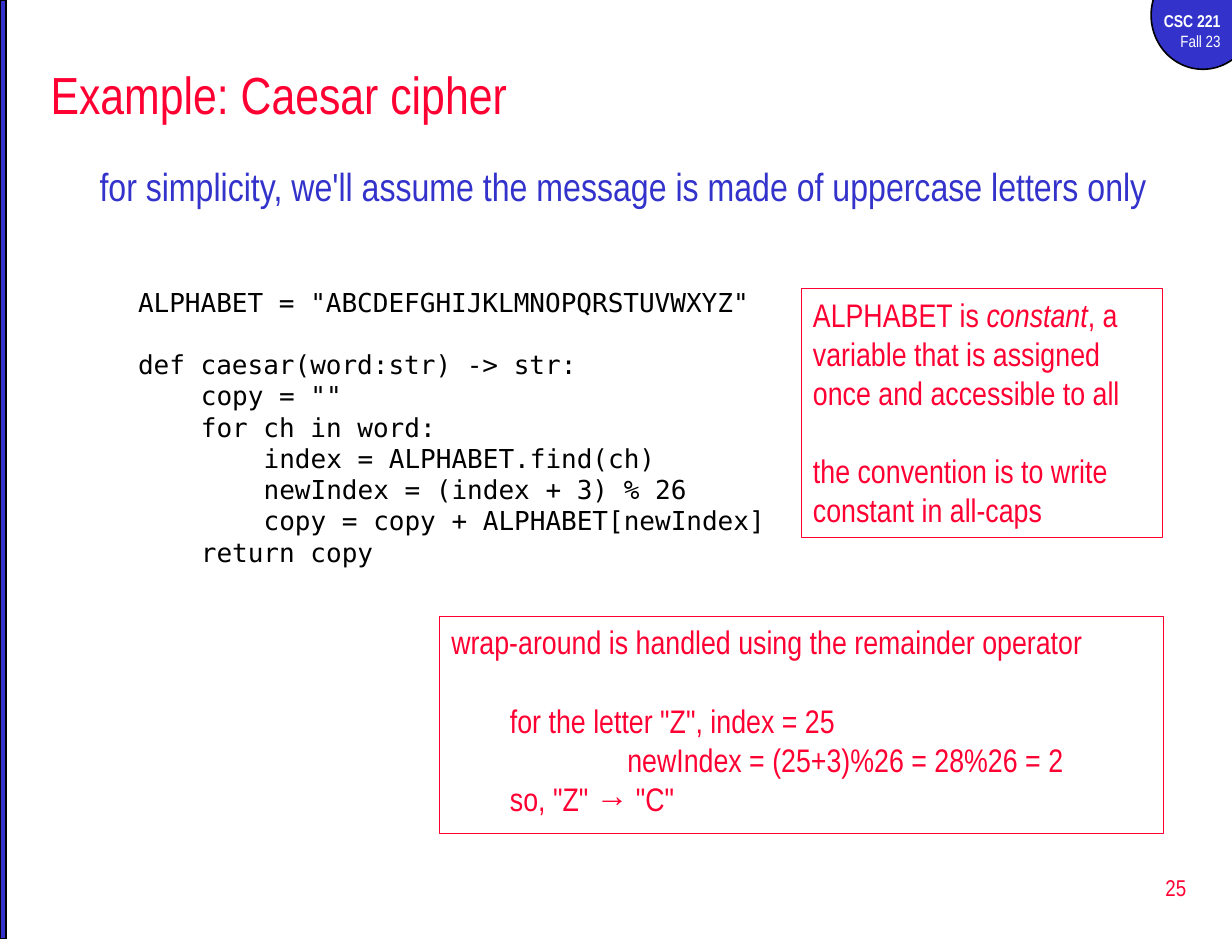
from pptx import Presentation
from pptx.dml.color import RGBColor
from pptx.enum.shapes import MSO_SHAPE
from pptx.enum.text import MSO_ANCHOR, MSO_AUTO_SIZE, PP_ALIGN
from pptx.oxml import parse_xml
from pptx.oxml.ns import nsdecls
from pptx.util import Cm, Pt

COLORS = {"red": "FF0033", "blue": "3333CC", "black": "000000", "white": "FFFFFF"}
SANS = "Arial Narrow"
MONO = "DejaVu Sans Mono"
TAB = 1.27
STEP = 1.36

CODE = [
    (0, 0, 'ALPHABET = "ABCDEFGHIJKLMNOPQRSTUVWXYZ"'),
    (0, 19, "def caesar(word:str) -> str:"),
    (STEP, 0, 'copy = ""'),
    (STEP, 0, "for ch in word:"),
    (2 * STEP, 0, "index = ALPHABET.find(ch)"),
    (2 * STEP, 0, "newIndex = (index + 3) % 26"),
    (2 * STEP, 0, "copy = copy + ALPHABET[newIndex]"),
    (STEP, 0, "return copy"),
]
CONST = [
    (0, 0, "ALPHABET is |constant|, a variable that is assigned once and accessible to all"),
    (0, 24, "the convention is to write constant in all-caps"),
]
WRAP = [
    (0, 0, "wrap-around is handled using the remainder operator"),
    (TAB, 24, 'for the letter "Z", index = 25'),
    (3 * TAB, 0, "newIndex = (25+3)%26 = 28%26 = 2"),
    (TAB, 0, 'so, "Z" → "C"'),
]


def color(name):
    return RGBColor.from_string(COLORS[name])


def place(shape, box):
    shape.left, shape.top, shape.width, shape.height = map(Cm, box)


def style(para, size, hue, font=SANS, align=PP_ALIGN.LEFT):
    para.alignment = align
    for run in para.runs:
        run.font.size = Pt(size)
        run.font.name = font
        run.font.color.rgb = color(hue)


def indent(para, left, first=0):
    props = para._p.get_or_add_pPr()
    props.set("marL", str(Cm(left)))
    props.set("indent", str(Cm(first)))


def write(frame, lines, size, hue, font=SANS):
    frame.word_wrap = True
    frame.vertical_anchor = MSO_ANCHOR.TOP
    for i, (left, gap, text) in enumerate(lines):
        para = frame.paragraphs[0] if i == 0 else frame.add_paragraph()
        for j, part in enumerate(text.split("|")):
            run = para.add_run()
            run.text = part
            run.font.italic = j % 2 == 1
        para.space_before = Pt(gap)
        indent(para, left)
        style(para, size, hue, font)


def shape(slide, kind, box, fill, line, width):
    item = slide.shapes.add_shape(kind, *map(Cm, box))
    item.shadow.inherit = False
    if fill:
        item.fill.solid()
        item.fill.fore_color.rgb = color(fill)
    else:
        item.fill.background()
    item.line.color.rgb = color(line)
    item.line.width = Pt(width)
    return item


def label(slide, box):
    item = slide.shapes.add_textbox(*map(Cm, box))
    item.text_frame.word_wrap = True
    return item.text_frame


def badge(slide, box):
    x, y, w, h = box
    shape(slide, MSO_SHAPE.OVAL, (x + 0.36, y, w - 0.36, h), "blue", "black", 1)
    frame = label(slide, (x, y + 0.94, w - 0.49, h / 2))
    frame.text = "CSC 221\nFall 23"
    for para, size in zip(frame.paragraphs, (10.5, 10)):
        style(para, size, "white", align=PP_ALIGN.RIGHT)
    frame.paragraphs[0].runs[0].font.bold = True


def bar(slide, box):
    shape(slide, MSO_SHAPE.RECTANGLE, box, "blue", "black", 1)


def title(slide, box):
    item = slide.shapes.title
    place(item, box)
    frame = item.text_frame
    frame.text = "Example: Caesar cipher"
    frame.auto_size = MSO_AUTO_SIZE.NONE
    frame.vertical_anchor = MSO_ANCHOR.MIDDLE
    style(frame.paragraphs[0], 32, "red")


def body(slide, box):
    item = slide.placeholders[1]
    place(item, box)
    frame = item.text_frame
    frame.text = "for simplicity, we'll assume the message is made of uppercase letters only"
    frame.auto_size = MSO_AUTO_SIZE.NONE
    para = frame.paragraphs[0]
    para.space_before = Pt(4.8)
    indent(para, 0.97, -0.97)
    para._p.get_or_add_pPr().append(parse_xml(f"<a:buNone {nsdecls('a')}/>"))
    style(para, 24, "blue")


def code(slide, box):
    write(label(slide, box), CODE, 16, "black", MONO)


def note(slide, box, lines):
    item = shape(slide, MSO_SHAPE.RECTANGLE, box, None, "red", 0.75)
    write(item.text_frame, lines, 20, "red")


def number(slide, box):
    frame = label(slide, box)
    frame.text = "25"
    frame.vertical_anchor = MSO_ANCHOR.MIDDLE
    style(frame.paragraphs[0], 14, "red", align=PP_ALIGN.RIGHT)


def main():
    deck = Presentation()
    deck.slide_width, deck.slide_height = Cm(26.67), Cm(20.32)
    slide = deck.slides.add_slide(deck.slide_layouts[1])
    badge(slide, (24.56, -0.84, 2.6, 2.34))
    bar(slide, (0, 0, 0.13, 20.32))
    title(slide, (0.84, 1.07, 25.2, 1.9))
    body(slide, (1.9, 3.38, 24.18, 1.9))
    number(slide, (20.37, 18.52, 5.56, 1.35))
    note(slide, (9.52, 13.34, 15.67, 4.7), WRAP)
    note(slide, (17.35, 6.25, 7.82, 5.38), CONST)
    code(slide, (2.74, 6.07, 14.4, 6.4))
    deck.save("out.pptx")


if __name__ == "__main__":
    main()
